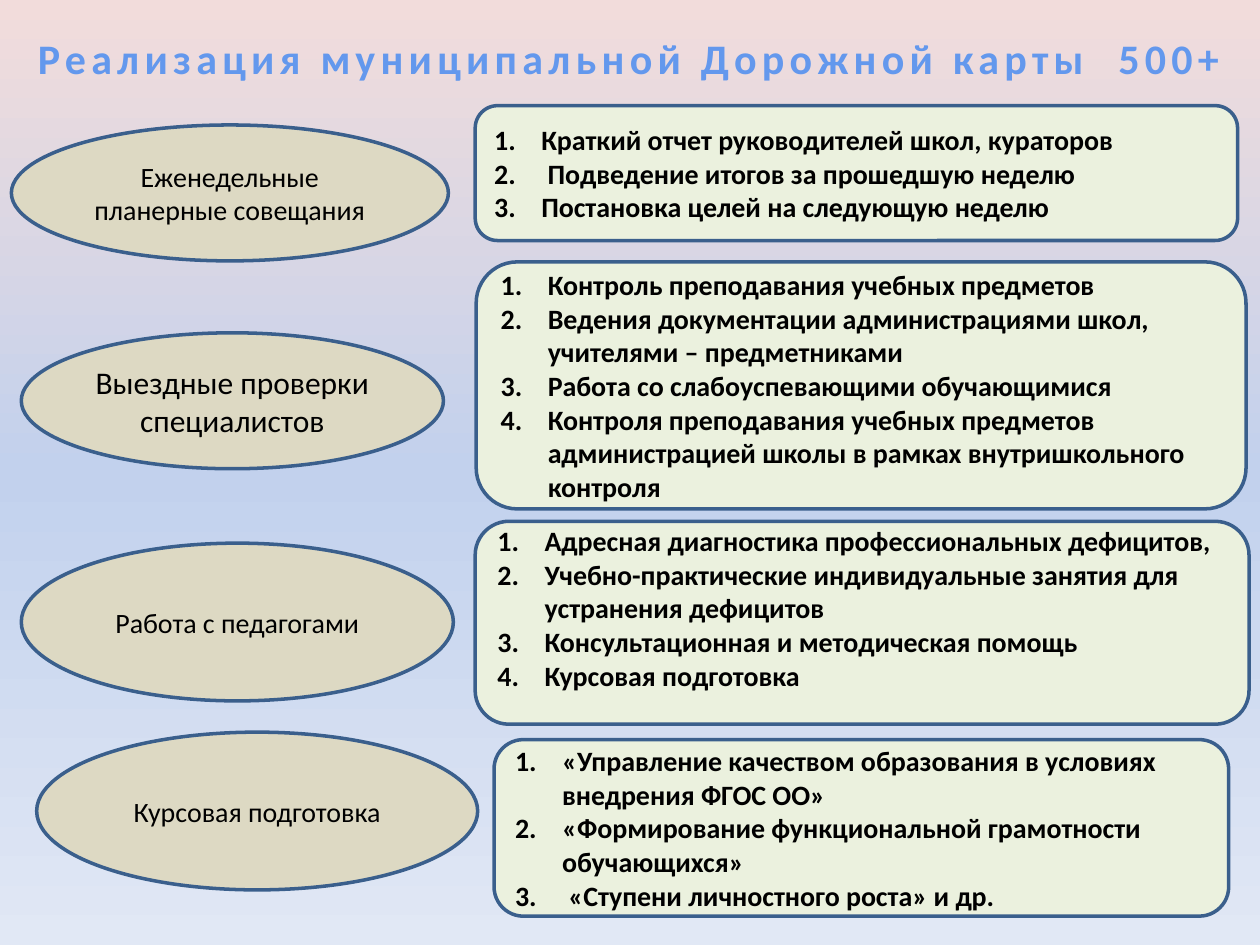
from dataclasses import dataclass

from lxml import etree
from pptx import Presentation
from pptx.dml.color import RGBColor
from pptx.enum import shapes, text
from pptx.oxml import parse_xml
from pptx.oxml.ns import nsdecls, qn
from pptx.util import Cm, Pt

FONT = "Calibri"
BLACK, OUTLINE = "000000", "3A5F8C"
TOPIC_FILL, LIST_FILL = "DDD9C3", "EBF1DE"
TITLE_COLOUR, TITLE_SHADOW = "6398ED", "6398ED"
BACKGROUND_STOPS = ((0, "F2DCDB"), (50, "C2D1ED"), (100, "E1E8F5"))
NUMBER_INDENT = Cm(0.95)


@dataclass
class Box:
    left: float
    top: float
    width: float
    height: float

    def lengths(self):
        return [Cm(value) for value in (self.left, self.top, self.width, self.height)]


@dataclass
class Section:
    topic: str
    oval: Box
    panel: Box
    items: list[str]
    topic_size: int = 16
    bottom_margin: float = 0.13


SECTIONS = [
    Section(
        "Еженедельные планерные совещания",
        Box(0.23, 2.52, 8.81, 2.74),
        Box(9.58, 2.13, 15.37, 2.72),
        ["Краткий отчет руководителей школ, кураторов",
         " Подведение итогов за прошедшую неделю",
         "Постановка целей на следующую неделю"],
    ),
    Section(
        "Выездные проверки специалистов",
        Box(0.43, 6.71, 8.51, 2.74),
        Box(9.6, 5.28, 15.52, 4.98),
        ["Контроль преподавания учебных предметов",
         "Ведения документации администрациями школ, учителями – предметниками",
         "Работа со слабоуспевающими обучающимися",
         "Контроля преподавания учебных предметов администрацией школы "
         "в рамках внутришкольного контроля"],
        topic_size=18,
    ),
    Section(
        "Работа с педагогами",
        Box(0.43, 10.95, 8.71, 3.18),
        Box(9.58, 10.51, 15.6, 4.09),
        ["Адресная диагностика профессиональных дефицитов,",
         "Учебно-практические индивидуальные занятия для устранения дефицитов",
         "Консультационная и методическая помощь",
         "Курсовая подготовка"],
        bottom_margin=0.73,
    ),
    Section(
        "Курсовая подготовка",
        Box(0.74, 14.76, 8.89, 3.18),
        Box(9.96, 14.91, 14.81, 3.56),
        ["«Управление качеством образования в условиях внедрения ФГОС ОО»",
         "«Формирование функциональной грамотности обучающихся»",
         " «Ступени личностного роста» и др."],
    ),
]


def colour(value: str) -> RGBColor:
    return RGBColor.from_string(value)


def add_run(paragraph, words: str, size: int, hex_colour: str = BLACK, bold: bool = False):
    run = paragraph.add_run()
    run.text = words
    run.font.name = FONT
    run.font.size = Pt(size)
    run.font.bold = bold
    run.font.color.rgb = colour(hex_colour)
    return run


def set_background(slide) -> None:
    stops = "".join(
        f'<a:gs pos="{position * 1000}"><a:srgbClr val="{value}"/></a:gs>'
        for position, value in BACKGROUND_STOPS
    )
    background = parse_xml(
        f'<p:bg {nsdecls("p", "a")}><p:bgPr><a:gradFill rotWithShape="1">'
        f'<a:gsLst>{stops}</a:gsLst><a:lin ang="5400000" scaled="0"/></a:gradFill>'
        "<a:effectLst/></p:bgPr></p:bg>"
    )
    slide.element.cSld.insert(0, background)


def add_title(slide, words: str) -> None:
    title = slide.shapes.title
    title.left, title.top, title.width, title.height = Box(0.18, 0.53, 25, 1.27).lengths()
    frame = title.text_frame
    frame.word_wrap = True
    frame.auto_size = text.MSO_AUTO_SIZE.NONE
    frame.vertical_anchor = text.MSO_ANCHOR.MIDDLE
    paragraph = frame.paragraphs[0]
    paragraph.alignment = text.PP_ALIGN.CENTER
    run = add_run(paragraph, words, 24, TITLE_COLOUR, bold=True)
    properties = run.font._element
    properties.set("spc", "300")
    shadow = parse_xml(
        f'<a:effectLst {nsdecls("a")}><a:outerShdw blurRad="50800" dist="38100" dir="2700000">'
        f'<a:srgbClr val="{TITLE_SHADOW}"><a:alpha val="60000"/></a:srgbClr>'
        "</a:outerShdw></a:effectLst>"
    )
    properties.find(qn("a:solidFill")).addnext(shadow)


def add_outlined_shape(slide, kind, box: Box, fill: str):
    shape = slide.shapes.add_shape(kind, *box.lengths())
    shape.shadow.inherit = False
    shape.fill.solid()
    shape.fill.fore_color.rgb = colour(fill)
    shape.line.color.rgb = colour(OUTLINE)
    shape.line.width = Pt(2)
    shape.text_frame.word_wrap = True
    shape.text_frame.vertical_anchor = text.MSO_ANCHOR.MIDDLE
    return shape


def number_paragraph(paragraph) -> None:
    properties = paragraph._p.get_or_add_pPr()
    properties.set("marL", str(NUMBER_INDENT))
    properties.set("indent", str(-NUMBER_INDENT))
    font = etree.SubElement(properties, qn("a:buFont"))
    font.set("typeface", "+mj-lt")
    numbering = etree.SubElement(properties, qn("a:buAutoNum"))
    numbering.set("type", "arabicPeriod")


def add_section(slide, section: Section) -> None:
    oval = add_outlined_shape(slide, shapes.MSO_SHAPE.OVAL, section.oval, TOPIC_FILL)
    paragraph = oval.text_frame.paragraphs[0]
    paragraph.alignment = text.PP_ALIGN.CENTER
    add_run(paragraph, section.topic, section.topic_size)

    panel = add_outlined_shape(
        slide, shapes.MSO_SHAPE.ROUNDED_RECTANGLE, section.panel, LIST_FILL)
    frame = panel.text_frame
    frame.margin_bottom = Cm(section.bottom_margin)
    for index, item in enumerate(section.items):
        paragraph = frame.add_paragraph() if index else frame.paragraphs[0]
        paragraph.alignment = text.PP_ALIGN.LEFT
        number_paragraph(paragraph)
        add_run(paragraph, item, 16, bold=True)


def main() -> None:
    presentation = Presentation()
    presentation.slide_width, presentation.slide_height = Cm(25.4), Cm(19.05)
    slide = presentation.slides.add_slide(presentation.slide_layouts.get_by_name("Title Only"))
    set_background(slide)
    add_title(slide, "Реализация муниципальной Дорожной карты  500+")
    for section in SECTIONS:
        add_section(slide, section)
    presentation.save("out.pptx")


if __name__ == "__main__":
    main()
